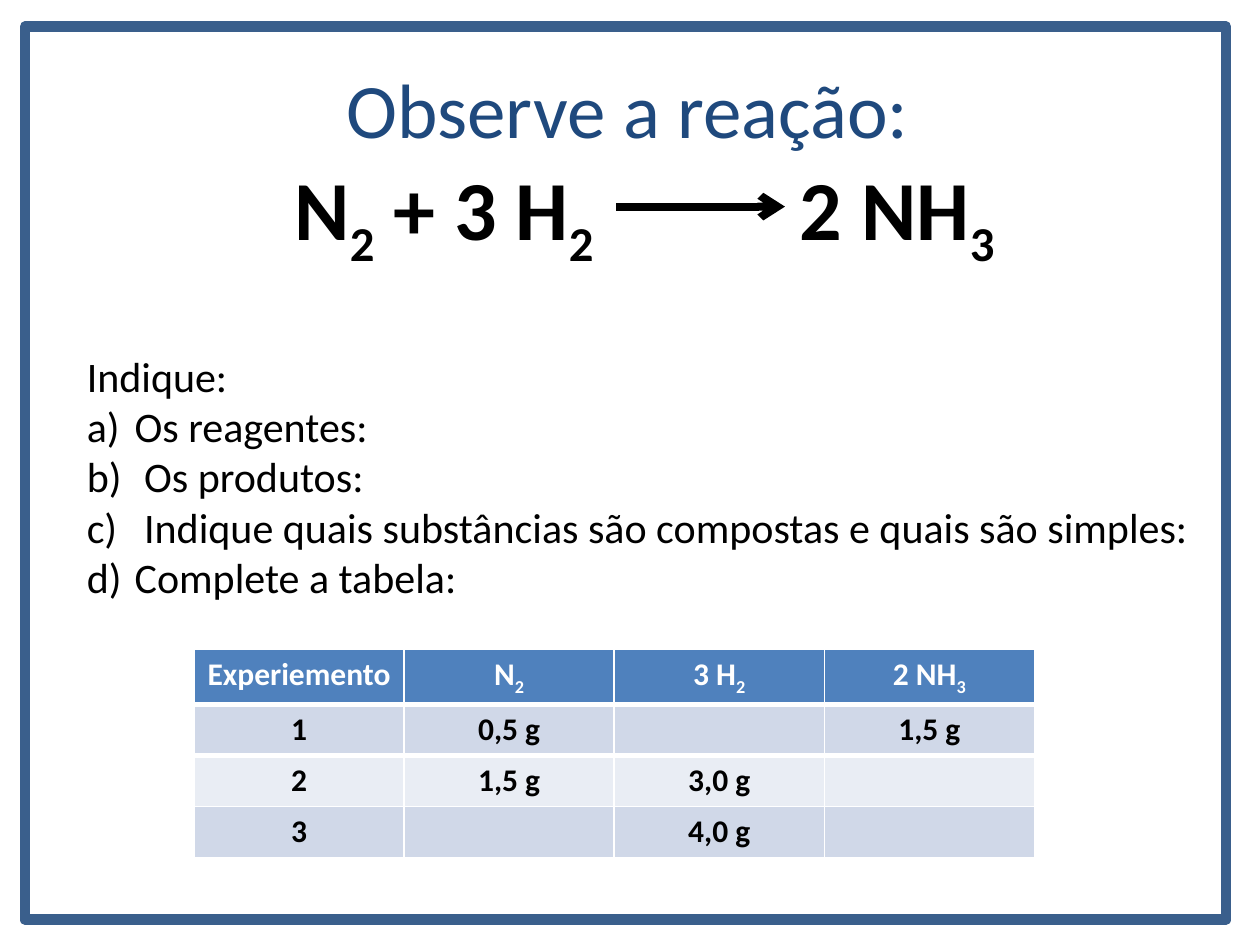
"""Build a slide on the synthesis of ammonia with questions and a table."""
from dataclasses import dataclass

from lxml import etree
from pptx import Presentation
from pptx.dml.color import RGBColor
from pptx.enum.shapes import MSO_CONNECTOR, MSO_SHAPE
from pptx.enum.text import MSO_ANCHOR, MSO_AUTO_SIZE, PP_ALIGN
from pptx.oxml.ns import qn
from pptx.util import Inches, Pt

LEFT, CENTER = PP_ALIGN.LEFT, PP_ALIGN.CENTER
TOP, NO_FIT = MSO_ANCHOR.TOP, MSO_AUTO_SIZE.NONE
STRAIGHT, RECTANGLE = MSO_CONNECTOR.STRAIGHT, MSO_SHAPE.RECTANGLE

BLACK = RGBColor(0x00, 0x00, 0x00)
WHITE = RGBColor(0xFF, 0xFF, 0xFF)
NAVY = RGBColor(0x1F, 0x49, 0x7D)
FRAME_BLUE = RGBColor(0x3A, 0x5F, 0x8C)
HEADER_BLUE = RGBColor(0x4F, 0x81, 0xBD)
BANDS = (RGBColor(0xE9, 0xED, 0xF4), RGBColor(0xD0, 0xD8, 0xE8))

FONT = "Calibri"
SLIDE_W, SLIDE_H = Inches(10), Inches(7.5)
GRID_COLS, GRID_ROWS = 100, 75
COL, ROW = SLIDE_W // GRID_COLS, SLIDE_H // GRID_ROWS


@dataclass(frozen=True)
class Box:
    """Place on the slide in grid columns and rows."""
    col: float
    row: float
    cols: float
    rows: float

    def emu(self):
        """Return left, top, width and height in EMU."""
        return (int(self.col * COL), int(self.row * ROW),
                int(self.cols * COL), int(self.rows * ROW))


@dataclass(frozen=True)
class Style:
    """Format of a text run."""
    size: int
    color: RGBColor = BLACK
    bold: bool = False


TITLE_BOX = Box(26.5, 4.4, 55.2, 8.5)
FORMULA_BOX = Box(22.4, 11.9, 62, 16.4)
QUESTIONS_BOX = Box(5.9, 27.3, 90.1, 24.2)
TABLE_BOX = Box(15.4, 51.5, 66.7, 16.2)
FRAME_BOX = Box(2, 2.1, 95.3, 70.9)
ARROW_START, ARROW_END, ARROW_ROW = 48.9, 62.3, 16.4
PRODUCT_TAB = Inches(4.01)

TITLE_STYLE = Style(44, NAVY)
FORMULA_STYLE = Style(48, bold=True)
QUESTION_STYLE = Style(24)
HEADER_STYLE = Style(18, WHITE, True)
CELL_STYLE = Style(18, bold=True)

FORMULA = "N|2| + 3 H|2|\t2 NH|3"
QUESTIONS = (
    "Os reagentes:",
    " Os produtos:",
    " Indique quais substâncias são compostas e quais são simples:",
    "Complete a tabela:",
)
TABLE = (
    ("Experiemento", "N|2", "3 H|2", "2 NH|3"),
    ("1", "0,5 g", "", "1,5 g"),
    ("2", "1,5 g", "3,0 g", ""),
    ("3", "", "4,0 g", ""),
)


def write(p, text: str, style: Style, align=LEFT) -> None:
    """Fill a paragraph; every second part between bars is a subscript."""
    p.alignment = align
    for i, part in enumerate(text.split("|")):
        r = p.add_run()
        r.text = part
        formats = {"name": FONT, "size": Pt(style.size), "bold": style.bold}
        for name, value in formats.items():
            setattr(r.font, name, value)
        r.font.color.rgb = style.color
        if i % 2:
            r.font._element.set("baseline", "-25000")


def set_frame(tf) -> None:
    """Wrap the text and start it at the top of its box."""
    formats = {"word_wrap": True, "auto_size": NO_FIT, "vertical_anchor": TOP}
    for name, value in formats.items():
        setattr(tf, name, value)


def draw_title(s) -> None:
    """Write the heading in the title placeholder."""
    sp = s.shapes.title
    sp.left, sp.top, sp.width, sp.height = TITLE_BOX.emu()
    set_frame(sp.text_frame)
    write(sp.text_frame.paragraphs[0], "Observe a reação:", TITLE_STYLE)


def draw_formula(s) -> None:
    """Write the reaction, with a tab over the arrow."""
    tf = s.shapes.add_textbox(*FORMULA_BOX.emu()).text_frame
    set_frame(tf)
    p = tf.paragraphs[0]
    write(p, FORMULA, FORMULA_STYLE)
    tabs = etree.SubElement(p._p.get_or_add_pPr(), qn("a:tabLst"))
    etree.SubElement(tabs, qn("a:tab"), pos=str(PRODUCT_TAB), algn="l")


def draw_arrow(s) -> None:
    """Draw the reaction arrow."""
    y = int(ARROW_ROW * ROW)
    arrow = s.shapes.add_connector(
        STRAIGHT, int(ARROW_START * COL), y, int(ARROW_END * COL), y)
    arrow.line.color.rgb = BLACK
    arrow.line.width = Pt(4.5)
    etree.SubElement(arrow.line._get_or_add_ln(), qn("a:tailEnd"), type="arrow")
    etree.SubElement(arrow._element.spPr, qn("a:effectLst"))


def draw_questions(s) -> None:
    """Write the lettered list of questions."""
    tf = s.shapes.add_textbox(*QUESTIONS_BOX.emu()).text_frame
    set_frame(tf)
    write(tf.paragraphs[0], "Indique:", QUESTION_STYLE)
    indent = Inches(0.38)
    for question in QUESTIONS:
        p = tf.add_paragraph()
        write(p, question, QUESTION_STYLE)
        pPr = p._p.get_or_add_pPr()
        pPr.set("marL", str(indent))
        pPr.set("indent", str(-indent))
        etree.SubElement(pPr, qn("a:buAutoNum"), type="alphaLcParenR")


def add_border(cell, side: str, width: float) -> None:
    """Put a white border on one side of a cell."""
    ln = etree.Element(qn(f"a:{side}"), w=str(Pt(width)))
    fill = etree.SubElement(ln, qn("a:solidFill"))
    etree.SubElement(fill, qn("a:srgbClr"), val=str(WHITE))
    cell._tc.get_or_add_tcPr().insert(0, ln)


def draw_table(s) -> None:
    """Draw the table of experiments."""
    table = s.shapes.add_table(len(TABLE), len(TABLE[0]), *TABLE_BOX.emu()).table
    for i, row in enumerate(TABLE):
        for j, text in enumerate(row):
            cell = table.cell(i, j)
            cell.fill.solid()
            cell.fill.fore_color.rgb = BANDS[i % 2] if i else HEADER_BLUE
            if i < 2:
                add_border(cell, "lnT" if i else "lnB", 3)
            if text:
                write(cell.text_frame.paragraphs[0], text,
                      CELL_STYLE if i else HEADER_STYLE, CENTER)


def draw_frame(s) -> None:
    """Draw the border around the slide."""
    sp = s.shapes.add_shape(RECTANGLE, *FRAME_BOX.emu())
    sp.shadow.inherit = False
    sp.fill.background()
    sp.line.color.rgb = FRAME_BLUE
    sp.line.width = Pt(6)


def main() -> None:
    """Build and save the presentation."""
    prs = Presentation()
    prs.slide_width, prs.slide_height = SLIDE_W, SLIDE_H
    s = prs.slides.add_slide(prs.slide_layouts.get_by_name("Title Only"))
    for draw in (draw_title, draw_formula, draw_arrow, draw_questions,
                 draw_table, draw_frame):
        draw(s)
    prs.save("out.pptx")


if __name__ == "__main__":
    main()
